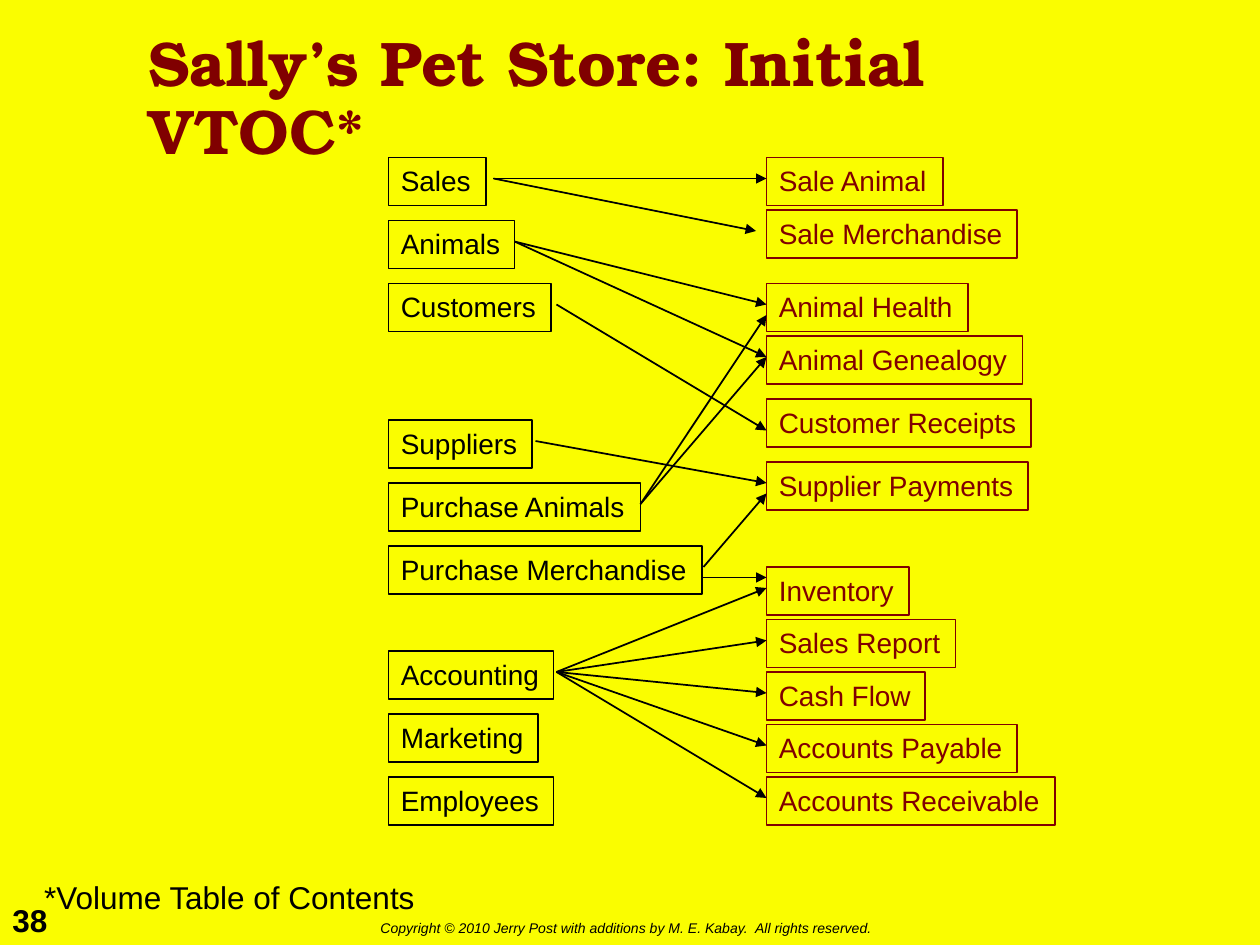
import pptx
import pptx.util
import pptx.dml.color
import pptx.enum.shapes
import pptx.enum.text
import pptx.oxml
import pptx.oxml.ns

Cm = pptx.util.Cm
Pt = pptx.util.Pt
Auto = pptx.enum.text.MSO_AUTO_SIZE
Anchor = pptx.enum.text.MSO_ANCHOR
Align = pptx.enum.text.PP_ALIGN

HUES = {"back": "FAFD00", "ink": "000000", "wine": "800000"}
UNIT = 2.54 / 12
HIGH = 0.97
COLS = [
    (37, "ink", {
        "Sales": (15, 1.96),
        "Animals": (21, 2.54),
        "Customers": (27, 3.28),
        "Suppliers": (40, 2.9),
        "Purchase Animals": (46, 5.08),
        "Purchase Merchandise": (52, 6.32),
        "Accounting": (62, 3.33),
        "Marketing": (68, 3.02),
        "Employees": (74, 3.33),
    }),
    (73, "wine", {
        "Sale Animal": (15, 3.56),
        "Sale Merchandise": (20, 5.05),
        "Animal Health": (27, 4.06),
        "Animal Genealogy": (32, 5.16),
        "Customer Receipts": (38, 5.33),
        "Supplier Payments": (44, 5.28),
        "Inventory": (54, 2.87),
        "Sales Report": (59, 3.81),
        "Cash Flow": (64, 3.2),
        "Accounts Payable": (69, 5.05),
        "Accounts Receivable": (74, 5.82),
    }),
]
# Each link: source, exit column and drop, then target, entry column and drop
LINKS = [
    ("Sales", 47, 2, [("Sale Animal", 73, 2), ("Sale Merchandise", 72, 2)]),
    ("Animals", 49, 2, [("Animal Health", 73, 2), ("Animal Genealogy", 73, 2)]),
    ("Customers", 53, 2, [("Customer Receipts", 73, 3)]),
    ("Suppliers", 51, 2, [("Supplier Payments", 73, 2)]),
    ("Purchase Animals", 61, 2, [("Animal Health", 73, 3), ("Animal Genealogy", 73, 2)]),
    ("Purchase Merchandise", 67, 2, [("Supplier Payments", 73, 3)]),
    ("Purchase Merchandise", 67, 3, [("Inventory", 73, 1)]),
    ("Accounting", 53, 2, [
        ("Inventory", 73, 2), ("Sales Report", 73, 2), ("Cash Flow", 73, 2),
        ("Accounts Payable", 73, 2), ("Accounts Receivable", 73, 2),
    ]),
]
NOTES = [
    ("Sally’s Pet Store: Initial VTOC*", (2.74, 0.43, 19.89, 3.18), "wine",
     {"name": "TeX Gyre Bonum", "size": Pt(36), "bold": True},
     {"word_wrap": True, "vertical_anchor": Anchor.MIDDLE}, {"line_spacing": 0.9}),
    ("*Volume Table of Contents", (0.64, 17.58, 8.1, 1.02), "ink",
     {"size": Pt(18)}, {}, {}),
    ("38", (0, 18.03, 1.3, 1.02), "ink", {"size": Pt(18), "bold": True}, {}, {}),
    ("Copyright © 2010 Jerry Post with additions by M. E. Kabay.  All rights reserved.",
     (7.42, 18.42, 10.72, 0.61), "ink", {"size": Pt(8), "italic": True}, {}, {}),
]
FONT = {"name": "Arial", "size": Pt(16)}
FRAME = {"word_wrap": False, "auto_size": Auto.NONE, "vertical_anchor": Anchor.TOP}
PARA = {"alignment": Align.LEFT}


def tint(hue):
    return pptx.dml.color.RGBColor.from_string(HUES[hue])


def apply(thing, form):
    for key, val in form.items():
        setattr(thing, key, val)


def write(shape, text, hue, font={}, frame={}, para={}):
    body = shape.text_frame
    body.text = text
    line = body.paragraphs[0]
    apply(body, {**FRAME, **frame})
    apply(line, {**PARA, **para})
    apply(line.font, {**FONT, **font})
    line.font.color.rgb = tint(hue)


def draw_box(slide, text, left, top, width, hue):
    box = slide.shapes.add_shape(
        pptx.enum.shapes.MSO_SHAPE.RECTANGLE,
        Cm(left * UNIT), Cm(top * UNIT), Cm(width), Cm(HIGH))
    box.shadow.inherit = False
    box.fill.background()
    box.line.color.rgb = tint(hue)
    box.line.width = Pt(1)
    write(box, text, hue)


def draw_link(slide, *ends):
    link = slide.shapes.add_connector(
        pptx.enum.shapes.MSO_CONNECTOR.STRAIGHT, *[Cm(end * UNIT) for end in ends])
    link.line.color.rgb = tint("ink")
    link.line.width = Pt(1)
    space = pptx.oxml.ns.nsdecls("a")
    head = pptx.oxml.parse_xml(f'<a:tailEnd {space} type="triangle"/>')
    link.line._get_or_add_ln().append(head)
    link._element.spPr.append(pptx.oxml.parse_xml(f"<a:effectLst {space}/>"))


def main():
    deck = pptx.Presentation()
    apply(deck, {"slide_width": Cm(25.4), "slide_height": Cm(19.05)})
    slide = deck.slides.add_slide(deck.slide_layouts[6])
    slide.background.fill.solid()
    slide.background.fill.fore_color.rgb = tint("back")

    for text, place, hue, font, frame, para in NOTES:
        note = slide.shapes.add_textbox(*map(Cm, place))
        write(note, text, hue, font, frame, para)

    tops = {}
    for left, hue, boxes in COLS:
        for text, (top, width) in boxes.items():
            tops[text] = top
            draw_box(slide, text, left, top, width, hue)

    for source, start, drop, goals in LINKS:
        for goal, stop, fall in goals:
            draw_link(slide, start, tops[source] + drop, stop, tops[goal] + fall)

    deck.save("out.pptx")


if __name__ == "__main__":
    main()
